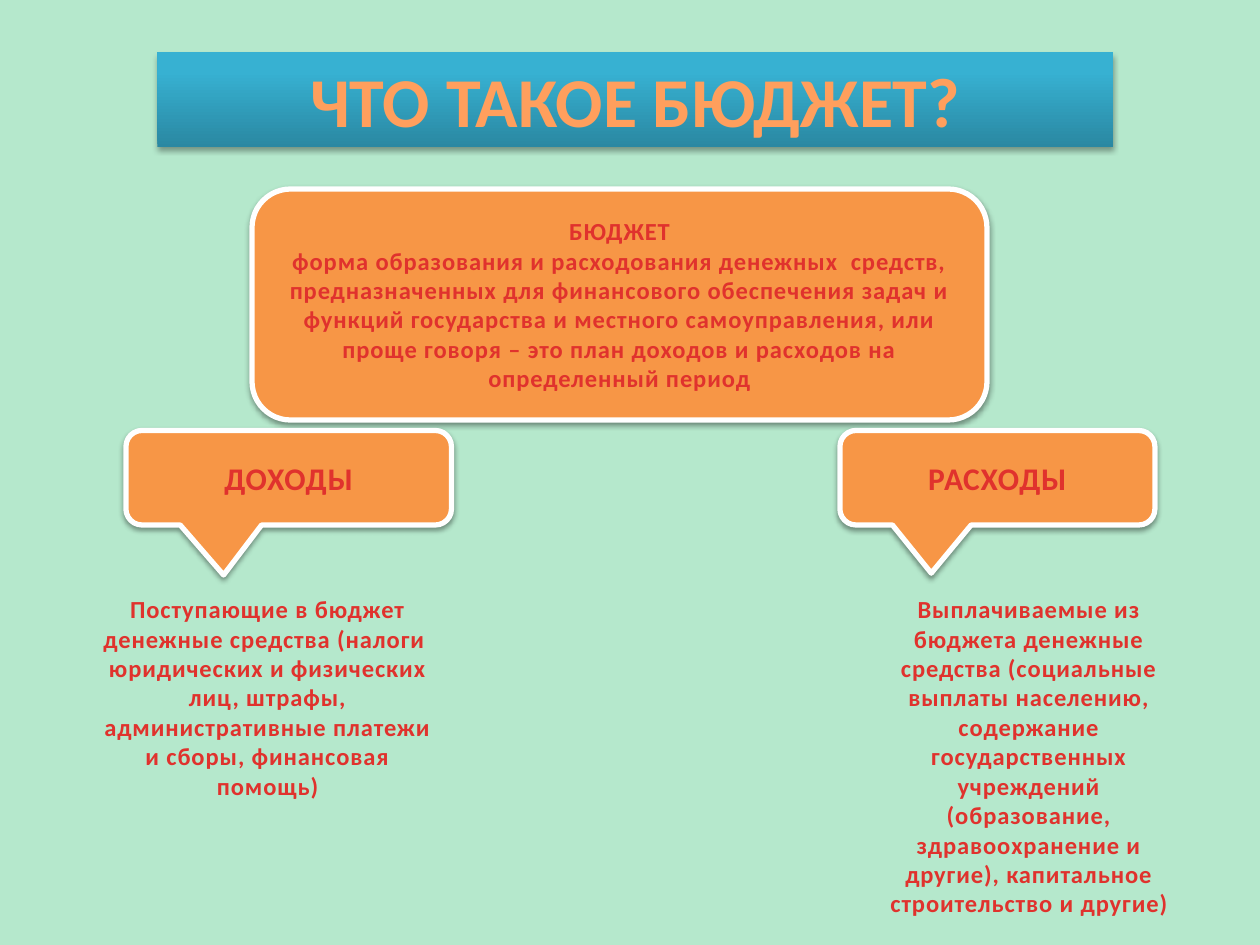
from lxml import etree
from pptx import Presentation
from pptx.dml.color import RGBColor
from pptx.enum.shapes import MSO_SHAPE
from pptx.enum.text import MSO_ANCHOR, PP_ALIGN
from pptx.oxml import parse_xml
from pptx.oxml.ns import qn
from pptx.util import Inches, Pt

RECT = MSO_SHAPE.RECTANGLE
ROUNDED = MSO_SHAPE.ROUNDED_RECTANGLE
CALLOUT = MSO_SHAPE.ROUNDED_RECTANGULAR_CALLOUT
MIDDLE, TOP = MSO_ANCHOR.MIDDLE, MSO_ANCHOR.TOP
CENTER = PP_ALIGN.CENTER

FONT = "Calibri"
COLORS = {
    "background": "B5E8CC",
    "banner_dark": "2A88A2",
    "banner_light": "37B1D2",
    "title": "FF9F5D",
    "card": "F79646",
    "border": "FFFFFF",
    "text": "E0322D",
    "shadow": "000000",
}
COLUMN = ROW = Inches(1 / 12)
NAMESPACE = "http://schemas.openxmlformats.org/drawingml/2006/main"

DEFINITION = [
    "БЮДЖЕТ",
    "форма образования и расходования денежных  средств, предназначенных для "
    "финансового обеспечения задач и функций государства и местного "
    "самоуправления, или проще говоря – это план доходов и расходов на "
    "определенный период",
]
INCOME = (
    "Поступающие в бюджет денежные средства (налоги  юридических и физических "
    "лиц, штрафы, административные платежи и сборы, финансовая помощь)"
)
EXPENSES = (
    "Выплачиваемые из бюджета денежные средства (социальные выплаты населению, "
    "содержание государственных учреждений (образование, здравоохранение и "
    "другие), капитальное строительство и другие)"
)


def rgb(name):
    """Return the named colour."""
    return RGBColor.from_string(COLORS[name])


def place(column, row, columns, rows):
    """Turn grid cells into left, top, width and height."""
    return column * COLUMN, row * ROW, columns * COLUMN, rows * ROW


def add_shadow(sp, opacity):
    """Give a shape a soft shadow that falls straight down."""
    sp.shadow.inherit = False
    effects = sp._element.spPr.find(qn("a:effectLst"))
    effects.append(parse_xml(
        f'<a:outerShdw xmlns:a="{NAMESPACE}" blurRad="{Pt(3.1)}" dist="{Pt(1.7)}" '
        f'dir="5400000" rotWithShape="0"><a:srgbClr val="{COLORS["shadow"]}">'
        f'<a:alpha val="{opacity * 1000}"/></a:srgbClr></a:outerShdw>'
    ))


def write(sp, lines, size, color="text", anchor=MIDDLE, spacing=50):
    """Write centred bold paragraphs into a shape."""
    tf = sp.text_frame
    tf.word_wrap = True
    tf.vertical_anchor = anchor
    tf.text = "\n".join(lines)
    for p in tf.paragraphs:
        p.alignment = CENTER
        p.font.name = FONT
        p.font.size = Pt(size)
        p.font.bold = True
        p.font.color.rgb = rgb(color)
        for r in p.runs:
            r._r.get_or_add_rPr().set("spc", str(spacing))


def add_banner(slide, box, title):
    """Add the gradient title banner."""
    sp = slide.shapes.add_shape(RECT, *box)
    sp.fill.gradient()
    sp.fill.gradient_angle = 90
    stops = zip(sp.fill.gradient_stops, (0, 0.8), ("banner_dark", "banner_light"))
    for stop, position, color in stops:
        stop.position = position
        stop.color.rgb = rgb(color)
    sp.line.fill.background()
    add_shadow(sp, 35)
    write(sp, [title], 40, "title", spacing=0)


def add_card(slide, kind, box, lines, size, adjustments=()):
    """Add an orange card with a white border."""
    sp = slide.shapes.add_shape(kind, *box)
    for i, value in enumerate(adjustments):
        sp.adjustments[i] = value
    sp.fill.solid()
    sp.fill.fore_color.rgb = rgb("card")
    sp.line.color.rgb = rgb("border")
    sp.line.width = Pt(3)
    add_shadow(sp, 38)
    write(sp, lines, size)


def add_note(slide, box, text):
    """Add an explanation below a callout."""
    write(slide.shapes.add_textbox(*box), [text], 14, anchor=TOP)


def main():
    """Build the budget slide."""
    prs = Presentation()
    prs.slide_width, prs.slide_height = Inches(10), Inches(7.5)
    slide = prs.slides.add_slide(prs.slide_layouts[6])
    slide.background.fill.solid()
    slide.background.fill.fore_color.rgb = rgb("background")

    add_banner(slide, place(15, 5, 91, 9), "ЧТО ТАКОЕ БЮДЖЕТ?")
    add_card(slide, ROUNDED, place(24, 18, 70, 22), DEFINITION, 14)
    add_note(slide, place(8, 56, 35, 21), INCOME)
    add_note(slide, place(82, 56, 32, 32.3), EXPENSES)
    add_card(slide, CALLOUT, place(12, 41, 31, 9), ["ДОХОДЫ"], 18, (-0.2, 1.03, 0.17))
    add_card(slide, CALLOUT, place(80, 41, 30, 9), ["РАСХОДЫ"], 18, (-0.21, 1.01, 0.17))
    prs.save("out.pptx")


if __name__ == "__main__":
    main()
